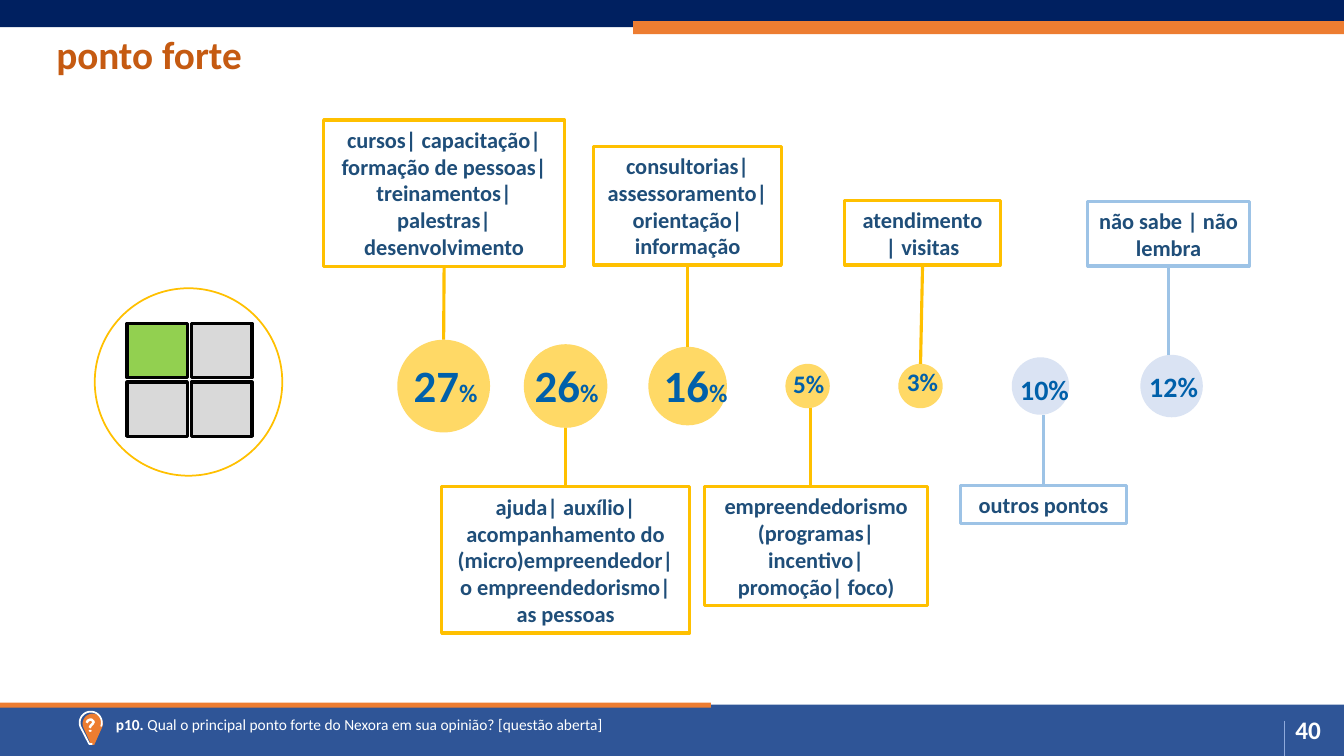
import math
from pptx import Presentation, util as u
from pptx.dml.color import RGBColor
from pptx.enum import shapes, text
from pptx.oxml.ns import qn
from lxml import etree

COLORS = {
    "navy": "002060", "orange": "ED7D31", "blue": "2F5597", "divider": "8FAADC",
    "title": "C55A11", "label": "1F4E79", "number": "0060AA", "white": "FFFFFF",
    "gold": "FFC000", "gold_light": "FFD966", "sky": "9DC3E6", "sky_light": "DAE3F3",
    "green": "92D050", "grey": "D9D9D9", "black": "000000",
}
RECT, OVAL = shapes.MSO_SHAPE.RECTANGLE, shapes.MSO_SHAPE.OVAL
AXIS_Y = 3.83
GOLD, SKY = ("gold", "gold_light"), ("sky", "sky_light")

# digits, digit size, % size, number centre (x, y), circle (centre x, diameter),
# stem x, label box (left, top, width, height), label, (line, circle) colours
ANSWERS = [
    ("27", 32, 18, (4.42, 3.83), (4.4, 0.92), 4.4, (3.21, 1.19, 2.39, 1.45),
     "cursos| capacitação| formação de pessoas| treinamentos| palestras| desenvolvimento", GOLD),
    ("26", 32, 18, (5.62, 3.83), (5.61, 0.83), 5.61, (4.38, 4.83, 2.46, 1.45),
     "ajuda| auxílio| acompanhamento do (micro)empreendedor| o empreendedorismo| as pessoas", GOLD),
    ("16", 32, 18, (6.9, 3.83), (6.82, 0.78), 6.82, (5.89, 1.45, 1.86, 1.18),
     "consultorias| assessoramento| orientação| informação", GOLD),
    ("5", 18, 18, (8.02, 3.81), (8.01, 0.44), 8.04, (6.99, 4.83, 2.21, 1.18),
     "empreendedorismo (programas| incentivo| promoção| foco)", GOLD),
    ("3", 18, 18, (9.15, 3.79), (9.13, 0.44), 9.13, (8.38, 1.99, 1.54, 0.64),
     "atendimento\n| visitas", GOLD),
    ("10", 20, 20, (10.36, 3.86), (10.32, 0.57), 10.35, (9.53, 4.82, 1.64, 0.37),
     "outros pontos", SKY),
    ("12", 20, 20, (11.64, 3.83), (11.62, 0.62), 11.59, (10.79, 2, 1.6, 0.64),
     "não sabe | não lembra", SKY),
]


def rgb(name):
    return RGBColor.from_string(COLORS[name])


def paint(shape, fill=None, line=None, width=2.25):
    shape.shadow.inherit = False
    if fill:
        shape.fill.solid()
        shape.fill.fore_color.rgb = rgb(fill)
    else:
        shape.fill.background()
    if line:
        shape.line.color.rgb = rgb(line)
        shape.line.width = u.Pt(width)
    else:
        shape.line.fill.background()


def add_preset(page, kind, place, fill=None, line=None, width=2.25):
    shape = page.shapes.add_shape(kind, *map(u.Inches, place))
    paint(shape, fill, line, width)
    return shape


def style_font(font, size, color, bold=True):
    font.name, font.size, font.bold = "Calibri", u.Pt(size), bold
    font.color.rgb = rgb(color)


def add_text(page, place, spans, color, align=text.PP_ALIGN.LEFT, wrap=True):
    """Add one paragraph made of (words, size, bold) spans."""
    box = page.shapes.add_textbox(*map(u.Inches, place))
    box.text_frame.word_wrap = wrap
    para = box.text_frame.paragraphs[0]
    para.alignment = align
    style_font(para.font, spans[0][1], color, spans[0][2])
    for words, size, bold in spans:
        span = para.add_run()
        span.text = words
        style_font(span.font, size, color, bold)


def add_line(page, start, end, color, width=2.25):
    line = page.shapes.add_connector(shapes.MSO_CONNECTOR.STRAIGHT, *map(u.Inches, start + end))
    line.line.color.rgb = rgb(color)
    line.line.width = u.Pt(width)
    etree.SubElement(line._element.spPr, qn("a:effectLst"))
    return line


def add_outline(page, points, fill=None, line=None, width=1.25):
    corners = [(u.Inches(x), u.Inches(y)) for x, y in points]
    builder = page.shapes.build_freeform(*corners[0])
    builder.add_line_segments(corners[1:], close=bool(fill))
    paint(builder.convert_to_shape(), fill, line, width)


def pin_points(x, y, radius, tip):
    """Round head over a point at the bottom, running from right to left."""
    head = [(x + radius * math.cos(math.radians(a)), y - radius * math.sin(math.radians(a)))
            for a in range(-20, 201, 10)]
    return head + [(x - 0.015, tip), (x + 0.015, tip)]


def add_question_pin(page):
    add_outline(page, pin_points(0.92, 7.18, 0.1, 7.39), fill="orange")
    add_outline(page, pin_points(0.9, 7.17, 0.11, 7.38), line="white")
    hook = [(0.86, 7.17), (0.87, 7.15), (0.89, 7.14), (0.91, 7.14), (0.93, 7.16),
            (0.92, 7.18), (0.9, 7.2), (0.89, 7.22)]
    add_outline(page, hook, line="white", width=1.75)
    add_preset(page, OVAL, (0.88, 7.24, 0.03, 0.02), "white")


def add_frame(page):
    for place, fill in [((0, 0, 13.33, 0.27), "navy"), ((6.28, 0.21, 7.05, 0.13), "orange"),
                        ((0, 6.99, 13.33, 0.51), "blue"), ((0, 6.97, 7.05, 0.05), "orange")]:
        add_preset(page, RECT, place, fill)
    add_line(page, (12.74, 7.15), (12.74, 7.5), "divider", 0.5)
    add_text(page, (12.75, 7.04, 0.56, 0.4), [("40", 18, True)], "white", wrap=False)
    add_text(page, (0.46, 0.25, 4.91, 0.57), [("ponto forte", 28, True)], "title")
    question = " Qual o principal ponto forte do Nexora em sua opinião? [questão aberta]"
    add_text(page, (1.05, 7.05, 10.71, 0.29), [("p10.", 11, True), (question, 11, False)], "white")


def add_quadrants(page):
    add_preset(page, OVAL, (0.94, 2.86, 1.86, 1.86), line="gold", width=1.25)
    for index in range(4):
        row, column = divmod(index, 2)
        add_preset(page, RECT, (1.26 + 0.64 * column, 3.21 + 0.58 * row, 0.6, 0.54),
                   "grey" if index else "green", "black")


def add_label(page, place, words, color):
    box = add_preset(page, RECT, place, line=color)
    box.text_frame.word_wrap = True
    box.text_frame.text = words
    for para in box.text_frame.paragraphs:
        para.alignment = text.PP_ALIGN.CENTER
        style_font(para.font, 16, "label")
    return box


def add_answer(page, digits, size, percent_size, number, circle, stem_x, place, words, colors):
    line_color, circle_color = colors
    circle_x, diameter = circle
    radius = diameter / 2
    add_preset(page, OVAL, (circle_x - radius, AXIS_Y - radius, diameter, diameter), circle_color)

    left, top, width, height = place
    box = add_label(page, place, words, line_color)
    below = top > AXIS_Y
    box_y = top if below else top + height
    circle_y = AXIS_Y + radius if below else AXIS_Y - radius
    stem = add_line(page, (stem_x, box_y), (stem_x, circle_y), line_color)
    if abs(stem_x - left - width / 2) < 0.03:
        stem.begin_connect(box, 0 if below else 2)

    text_height = 0.66 if size > 20 else 0.42
    x, y = number
    add_text(page, (x - 0.49, y - text_height / 2, 0.98, text_height),
             [(digits, size, True), ("%", percent_size, True)], "number", text.PP_ALIGN.CENTER)


def main():
    deck = Presentation()
    deck.slide_width, deck.slide_height = u.Inches(13.33), u.Inches(7.5)
    page = deck.slides.add_slide(deck.slide_layouts[6])
    add_frame(page)
    add_question_pin(page)
    add_quadrants(page)
    for answer in ANSWERS:
        add_answer(page, *answer)
    deck.save("out.pptx")


if __name__ == "__main__":
    main()
